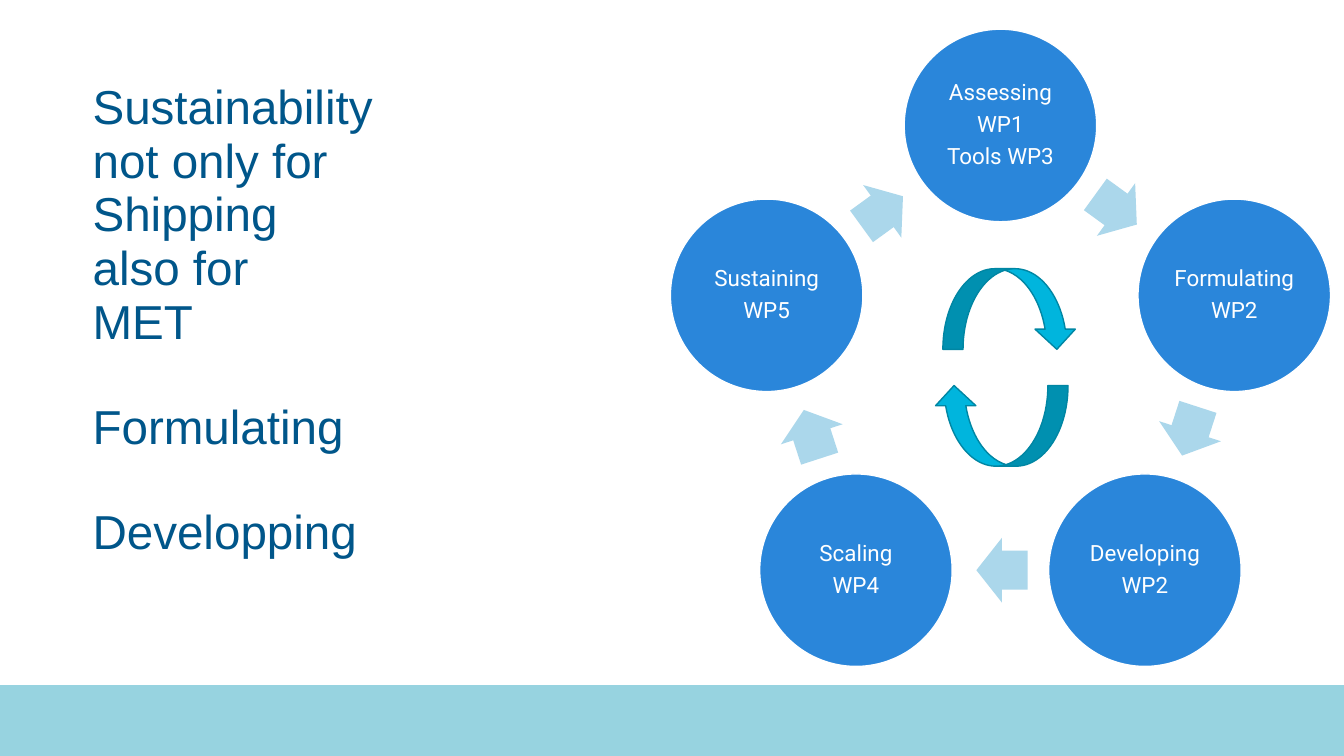
from math import cos, radians, sin

from pptx import Presentation
from pptx.dml.color import RGBColor
from pptx.enum.shapes import MSO_SHAPE as Shape
from pptx.enum.text import MSO_ANCHOR as Anchor, PP_ALIGN as Align
from pptx.util import Pt

COLORS = {
    "band": "97D3E0",
    "title": "00568A",
    "stage": "2A86DA",
    "step": "ABD7EB",
    "cycle": "00B5DD",
    "cycle_edge": "0086A3",
    "white": "FFFFFF",
}
TITLE_PITCH = 36.7
RING_X, RING_Y, RING_RADIUS = 714.6, 265.2, 175.6
STAGE_SIZE = 137.5
STEP_WIDTH, STEP_HEIGHT = 36.6, 46.4
STEP_LAG = 0.45  # degrees by which each arrow trails the midpoint
STAGES = [
    ["Assessing", "WP1", "Tools WP3"],
    ["Formulating", "WP2"],
    ["Developing", "WP2"],
    ["Scaling", "WP4"],
    ["Sustaining", "WP5"],
]


def apply(target, values):
    for name, value in values.items():
        setattr(target, name, value)


def on_ring(angle, radius):
    """Point at a clockwise angle from the top of the ring."""
    turn = radians(angle)
    return RING_X + radius * sin(turn), RING_Y - radius * cos(turn)


class SlideBuilder:
    title_font = {"name": "Arial", "size": Pt(34)}
    stage_font = {"name": "Roboto", "size": Pt(16)}

    def __init__(self, slide):
        self.shapes = slide.shapes

    def color(self, name):
        return RGBColor.from_string(COLORS[name])

    def shape(self, kind, left, top, width, height, fill, line=None, rotation=0):
        item = self.shapes.add_shape(kind, Pt(left), Pt(top), Pt(width), Pt(height))
        item.shadow.inherit = False
        item.rotation = rotation
        item.fill.solid()
        item.fill.fore_color.rgb = self.color(fill)
        if line:
            item.line.color.rgb = self.color(line)
            item.line.width = Pt(1)
        else:
            item.line.fill.background()
        return item

    def centered(self, kind, x, y, width, height, fill, line=None, rotation=0):
        return self.shape(kind, x - width / 2, y - height / 2, width, height,
                          fill, line, rotation)

    def fill_text(self, frame, lines, font, color, margins, layout):
        left, top, right, bottom = map(Pt, margins)
        apply(frame, {
            "word_wrap": True, "vertical_anchor": Anchor.MIDDLE,
            "margin_left": left, "margin_top": top,
            "margin_right": right, "margin_bottom": bottom,
        })
        for index, line in enumerate(lines):
            paragraph = frame.add_paragraph() if index else frame.paragraphs[0]
            paragraph.text = line
            apply(paragraph, layout)
            apply(paragraph.font, font)
            paragraph.font.color.rgb = self.color(color)

    def title(self, left, top, width, height, lines, spaced):
        box = self.shapes.add_textbox(Pt(left), Pt(top), Pt(width), Pt(height))
        frame = box.text_frame
        self.fill_text(frame, lines, self.title_font, "title",
                       (0, 0, 0, TITLE_PITCH),
                       {"alignment": Align.LEFT, "line_spacing": 0.94})
        for paragraph in frame.paragraphs:
            if paragraph.text in spaced:
                paragraph.space_before = Pt(TITLE_PITCH)

    def stage(self, angle, lines):
        x, y = on_ring(angle, RING_RADIUS)
        circle = self.centered(Shape.OVAL, x, y, STAGE_SIZE, STAGE_SIZE,
                               "stage", "white")
        self.fill_text(circle.text_frame, lines, self.stage_font, "white",
                       (1.6,) * 4,
                       {"alignment": Align.CENTER, "line_spacing": 0.9,
                        "space_after": Pt(5.6)})

    def step(self, angle):
        x, y = on_ring(angle - STEP_LAG, RING_RADIUS * cos(radians(36)))
        arrow = self.centered(Shape.RIGHT_ARROW, x, y, STEP_WIDTH, STEP_HEIGHT,
                              "step", rotation=angle)
        arrow.adjustments[0] = 0.6
        arrow.adjustments[1] = 0.5

    def cycle(self, x, y, rotation):
        self.centered(Shape.CURVED_LEFT_ARROW, x, y, 57.6, 95.8,
                      "cycle", "cycle_edge", rotation)


def main():
    deck = Presentation()
    deck.slide_width, deck.slide_height = Pt(960), Pt(540)
    builder = SlideBuilder(deck.slides.add_slide(deck.slide_layouts[6]))

    # Footer band
    builder.shape(Shape.RECTANGLE, 0, 489.4, 960, 50.6, "band")

    # Title
    builder.title(
        66.2, 19.4, 227.5, 456.5,
        ["Sustainability", "not only for Shipping", "also for", "MET",
         "Formulating", "Developping"],
        spaced=("Formulating", "Developping"))

    # Ring of stages, each followed by an arrow
    sector = 360 / len(STAGES)
    for index, lines in enumerate(STAGES):
        builder.stage(index * sector, lines)
        builder.step((index + 0.5) * sector)

    # Inner cycle
    builder.cycle(721.4, 220.7, 270)
    builder.cycle(715, 304.2, 90)

    deck.save("out.pptx")


if __name__ == "__main__":
    main()
